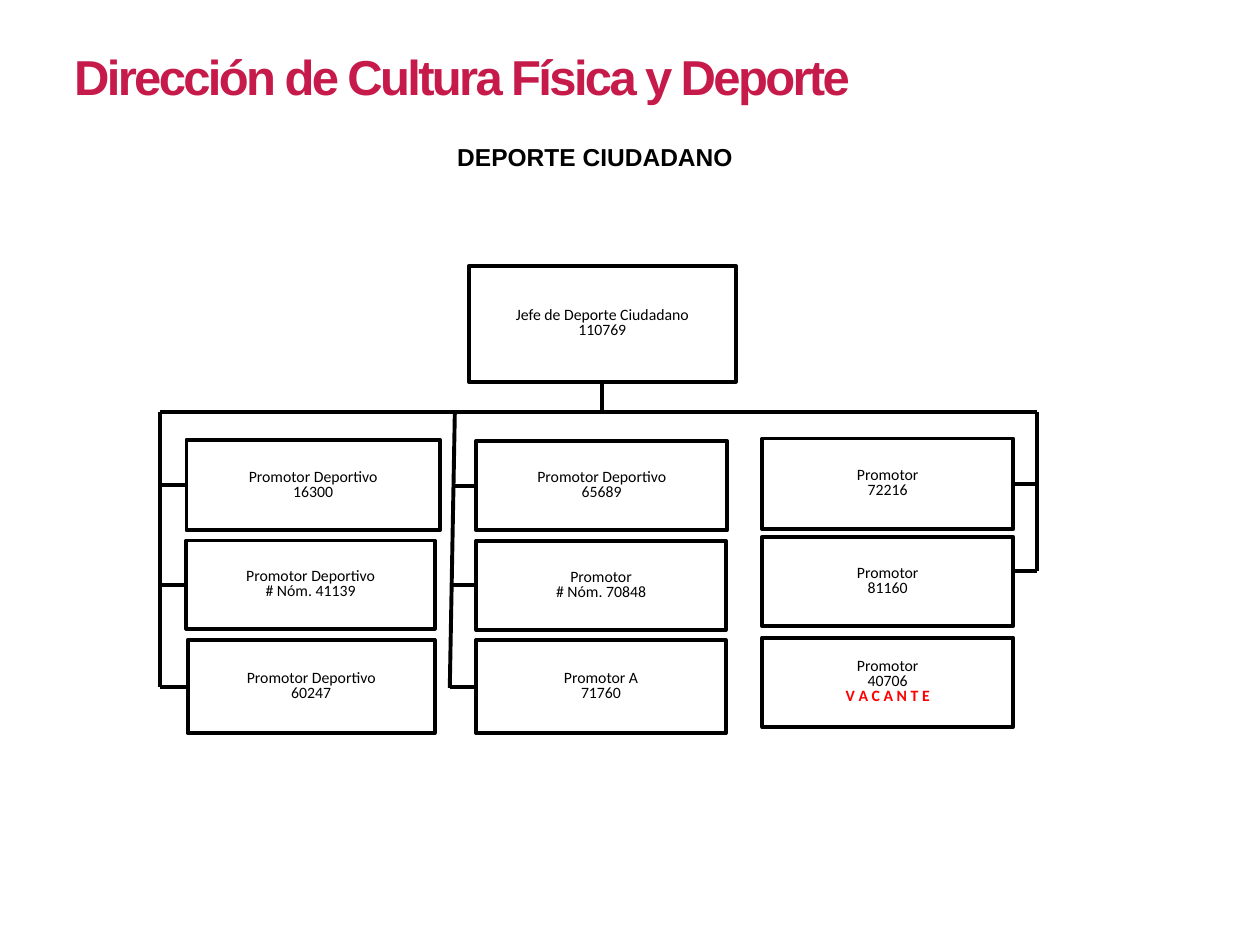
from lxml import etree
from pptx import Presentation
from pptx.dml.color import RGBColor
from pptx.enum.shapes import MSO_CONNECTOR as Connector, MSO_SHAPE as Shape
from pptx.enum.text import MSO_ANCHOR as Anchor, MSO_AUTO_SIZE as AutoSize, PP_ALIGN as Align
from pptx.oxml.ns import qn
from pptx.util import Inches, Pt

COLORS = {"title": "C51A4A", "ink": "000000", "paper": "FFFFFF", "vacant": "FF0000"}
VACANT = "V A C A N T E"
LEFT, BOTTOM, RIGHT = 1, 2, 3
LINE_WIDTH = 2.25

# Each position: left, top, width, height, lines of text
HEAD = (3.72, 2.11, 2.12, 0.92, ["Jefe de Deporte Ciudadano", "110769"])
LEFT_TEAM = [
    (1.48, 3.49, 2.01, 0.72, ["Promotor Deportivo", "16300"]),
    (1.48, 4.29, 1.97, 0.70, ["Promotor Deportivo", "# Nóm. 41139"]),
    (1.49, 5.08, 1.96, 0.74, ["Promotor Deportivo", "60247"]),
]
MIDDLE_TEAM = [
    (3.78, 3.50, 1.99, 0.71, ["Promotor Deportivo", "65689"]),
    (3.78, 4.29, 1.98, 0.71, ["Promotor", "# Nóm. 70848"]),
    (3.78, 5.08, 1.98, 0.74, ["Promotor A", "71760"]),
]
RIGHT_TEAM = [
    (6.05, 3.48, 1.99, 0.72, ["Promotor", "72216"]),
    (6.05, 4.26, 1.99, 0.71, ["Promotor", "81160"]),
    (6.05, 5.06, 1.99, 0.71, ["Promotor", "40706", VACANT]),
]
BUS_Y = 3.27


def color(name):
    return RGBColor.from_string(COLORS[name])


def add_run(paragraph, text, size, font, ink, bold=False):
    run = paragraph.add_run()
    run.text = text
    run.font.size = Pt(size)
    run.font.name = font
    run.font.bold = bold
    run.font.color.rgb = color(ink)
    return run


def add_heading(slide, text, left, top, width, height, size, ink, wrap):
    box = slide.shapes.add_textbox(*map(Inches, (left, top, width, height)))
    frame = box.text_frame
    frame.word_wrap = wrap
    frame.auto_size = AutoSize.SHAPE_TO_FIT_TEXT
    return add_run(frame.paragraphs[0], text, size, "Arial", ink, bold=True)


def add_position(slide, left, top, width, height, lines):
    box = slide.shapes.add_shape(Shape.RECTANGLE, *map(Inches, (left, top, width, height)))
    box.shadow.inherit = False
    box.fill.solid()
    box.fill.fore_color.rgb = color("paper")
    box.line.color.rgb = color("ink")
    box.line.width = Pt(LINE_WIDTH)
    frame = box.text_frame
    frame.word_wrap = False
    frame.vertical_anchor = Anchor.MIDDLE
    for index, text in enumerate(lines):
        paragraph = frame.add_paragraph() if index else frame.paragraphs[0]
        paragraph.alignment = Align.CENTER
        paragraph.line_spacing = 0.8
        vacant = text == VACANT
        add_run(paragraph, text, 9, "Calibri", "vacant" if vacant else "ink", vacant)
    return box


def add_line(slide, x1, y1, x2, y2):
    line = slide.shapes.add_connector(Connector.STRAIGHT, *map(Inches, (x1, y1, x2, y2)))
    line.line.color.rgb = color("ink")
    line.line.width = Pt(LINE_WIDTH)
    etree.SubElement(line._element.spPr, qn("a:effectLst"))
    return line


def add_branch(slide, box, side, trunk_x):
    """Join the middle of a box's side to its trunk with a level line."""
    y = (box.top + box.height / 2) / Inches(1)
    line = add_line(slide, trunk_x, y, trunk_x, y)
    line.end_connect(box, side)


def main():
    presentation = Presentation()
    presentation.slide_width = Inches(10)
    presentation.slide_height = Inches(7.5)
    slide = presentation.slides.add_slide(presentation.slide_layouts[6])

    title = add_heading(slide, "Dirección de Cultura Física y Deporte",
                        0.49, 0.32, 6.81, 0.57, 28, "title", True)
    title.font._element.set("spc", "-150")
    add_heading(slide, "DEPORTE CIUDADANO", 3.53, 1.08, 2.41, 0.34, 14, "ink", False)

    head = add_position(slide, *HEAD)
    left_team, middle_team, right_team = (
        [add_position(slide, *position) for position in team]
        for team in (LEFT_TEAM, MIDDLE_TEAM, RIGHT_TEAM)
    )

    add_line(slide, 4.78, 3.03, 4.78, BUS_Y).begin_connect(head, BOTTOM)
    add_line(slide, 1.27, BUS_Y, 8.23, BUS_Y)
    add_line(slide, 1.27, BUS_Y, 1.27, 5.45)
    add_line(slide, 3.61, BUS_Y, 3.57, 5.46)
    add_line(slide, 8.23, BUS_Y, 8.23, 4.53)

    for box in left_team:
        add_branch(slide, box, LEFT, 1.27)
    for box, trunk_x in zip(middle_team, (3.61, 3.58, 3.57)):
        add_branch(slide, box, LEFT, trunk_x)
    add_branch(slide, right_team[0], RIGHT, 8.23)
    add_line(slide, 8.04, 4.53, 8.23, 4.53)

    presentation.save("out.pptx")


if __name__ == "__main__":
    main()
